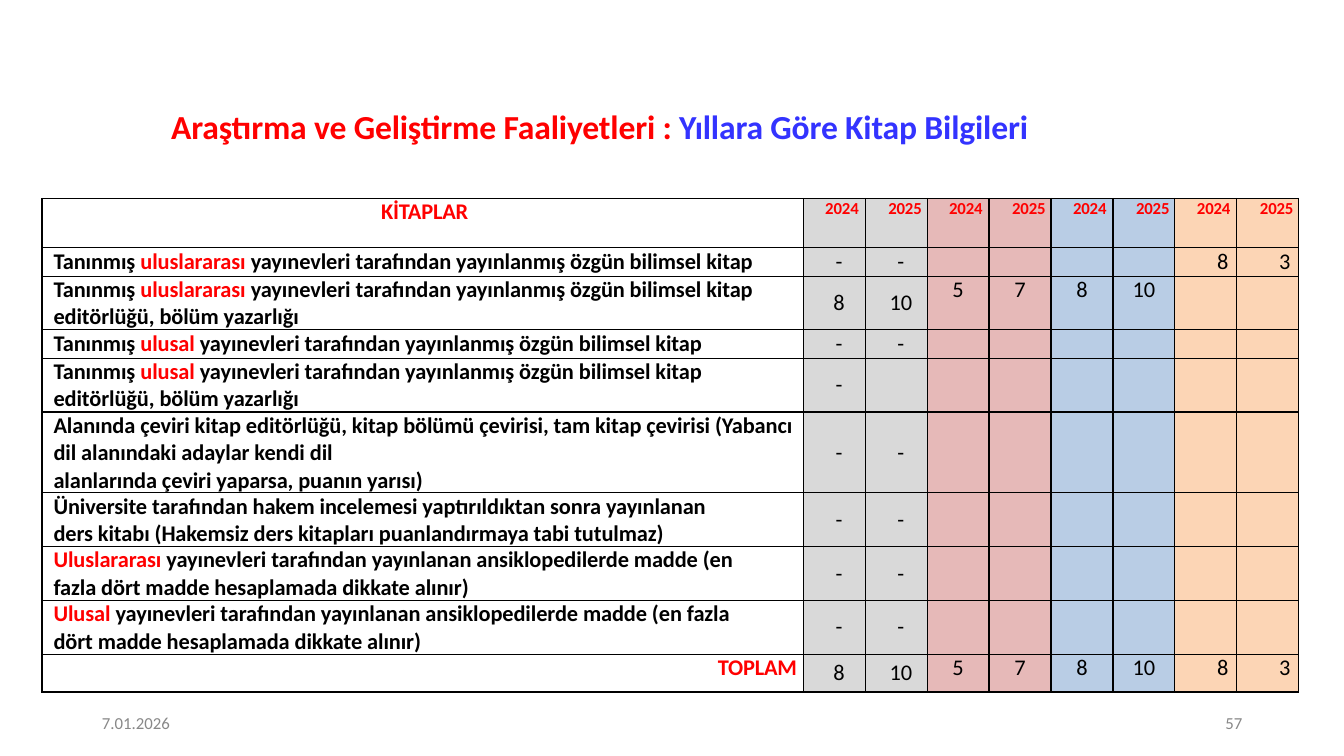
from lxml.etree import SubElement
from pptx import Presentation
from pptx.dml.color import RGBColor
from pptx.enum.text import MSO_ANCHOR, PP_ALIGN
from pptx.oxml.ns import qn
from pptx.util import Emu, Pt

RED = RGBColor(0xFF, 0x00, 0x00)
BLUE = RGBColor(0x33, 0x33, 0xFF)
BLACK = RGBColor(0x00, 0x00, 0x00)
GREY = RGBColor(0x88, 0x88, 0x88)
YEAR_FILLS = [RGBColor(0xD9, 0xD9, 0xD9), RGBColor(0xE6, 0xB9, 0xB8),
              RGBColor(0xB9, 0xCD, 0xE5), RGBColor(0xFC, 0xD5, 0xB5)]
FONT = "Calibri"

TITLE = [("Araştırma ve Geliştirme Faaliyetleri : ", RED),
         ("Yıllara Göre Kitap Bilgileri", BLUE)]
DATE, PAGE = "7.01.2026", "57"
HEADING, TOTAL = "KİTAPLAR", "TOPLAM"
YEARS = ["2024", "2025"] * 4
NONE = [""] * 6
WIDE, NARROW = 0, 51  # right margins of the label cells

# height, right margin, red words, label lines (each red word is cut out), values
ROWS = [
    (27, WIDE, "uluslararası",
     ["Tanınmış uluslararası yayınevleri tarafından yayınlanmış özgün bilimsel kitap"],
     ["-", "-", "", "", "", "", "8", "3"]),
    (51, WIDE, "uluslararası",
     ["Tanınmış uluslararası yayınevleri tarafından yayınlanmış özgün bilimsel kitap "
      "editörlüğü, bölüm yazarlığı"],
     ["8", "10", "5", "7", "8", "10", "", ""]),
    (27, WIDE, "ulusal",
     ["Tanınmış ulusal yayınevleri tarafından yayınlanmış özgün bilimsel kitap"],
     ["-", "-"] + NONE),
    (51, NARROW, "ulusal",
     ["Tanınmış ulusal yayınevleri tarafından yayınlanmış özgün bilimsel kitap "
      "editörlüğü, bölüm yazarlığı"],
     ["-", ""] + NONE),
    (77, WIDE, None,
     ["Alanında çeviri kitap editörlüğü, kitap bölümü çevirisi, tam kitap çevirisi "
      "(Yabancı dil alanındaki adaylar kendi dil",
      "alanlarında çeviri yaparsa, puanın yarısı)"],
     ["-", "-"] + NONE),
    (51, NARROW, None,
     ["Üniversite tarafından hakem incelemesi yaptırıldıktan sonra yayınlanan ders "
      "kitabı (Hakemsiz ders kitapları puanlandırmaya tabi tutulmaz)"],
     ["-", "-"] + NONE),
    (51, NARROW, "Uluslararası",
     ["Uluslararası yayınevleri tarafından yayınlanan ansiklopedilerde madde (en fazla "
      "dört madde hesaplamada dikkate alınır)"],
     ["-", "-"] + NONE),
    (51, NARROW, "Ulusal",
     ["Ulusal yayınevleri tarafından yayınlanan ansiklopedilerde madde (en fazla dört "
      "madde hesaplamada dikkate alınır)"],
     ["-", "-"] + NONE),
]
TOTALS = ["8", "10", "5", "7", "8", "10", "8", "3"]
HEAD_H, TOTAL_H = 47, 36
LABEL_W, YEAR_W = 725, 59
TABLE_X, TABLE_Y = 40, 189


def px(n):
    return Emu(n * 9525)


def add_run(p, text, size, color, bold=False, spacing=0):
    """Append a run; spacing is in hundredths of a point."""
    r = p.add_run()
    r.text = text
    r.font.name, r.font.size, r.font.bold = FONT, Pt(size), bold
    r.font.color.rgb = color
    if spacing:
        r.font._element.set("spc", str(spacing))


def add_text(s, x, y, w, h, parts, size, bold=False, left=0, top=0, spacing=0):
    tf = s.shapes.add_textbox(px(x), px(y), px(w), px(h)).text_frame
    tf.word_wrap = True
    tf.margin_left, tf.margin_top = px(left), px(top)
    tf.margin_right = tf.margin_bottom = 0
    for text, color in parts:
        add_run(tf.paragraphs[0], text, size, color, bold, spacing)


def style_cell(cell, fill=None, left=0, right=0, align=PP_ALIGN.LEFT, anchor=MSO_ANCHOR.TOP):
    cell.margin_left, cell.margin_right = px(left), px(right)
    cell.margin_top = cell.margin_bottom = 0
    cell.vertical_anchor = anchor
    tcPr = cell._tc.get_or_add_tcPr()
    for side in ("lnL", "lnR", "lnT", "lnB"):
        ln = SubElement(tcPr, qn("a:" + side), w=str(Pt(1)))
        color = SubElement(SubElement(ln, qn("a:solidFill")), qn("a:srgbClr"))
        color.set("val", str(BLACK))
    if fill is None:
        cell.fill.background()
    else:
        cell.fill.solid()
        cell.fill.fore_color.rgb = fill
    p = cell.text_frame.paragraphs[0]
    p.alignment = align
    return p


def fill_label(cell, right, red_word, lines):
    p = style_cell(cell, left=11, right=right)
    for i, line in enumerate(lines):
        if i:
            p = cell.text_frame.add_paragraph()
        before, word, after = line.partition(red_word) if red_word else (line, "", "")
        for text, color in ((before, BLACK), (word, RED), (after, BLACK)):
            if text:
                add_run(p, text, 16, color, True, -6)


def fill_values(table, row, values):
    for i, value in enumerate(values):
        group = i // 2
        layout = {}
        if group == 0:
            layout = dict(left=16, right=7, align=PP_ALIGN.CENTER, anchor=MSO_ANCHOR.MIDDLE)
        elif group == 3:
            layout = dict(right=8, align=PP_ALIGN.RIGHT)
        else:
            layout = dict(align=PP_ALIGN.CENTER)
        p = style_cell(table.cell(row, i + 1), YEAR_FILLS[group], **layout)
        if value:
            add_run(p, value, 16, BLACK)
        else:
            SubElement(p._p, qn("a:endParaRPr"), sz="1000")


def add_books_table(s):
    heights = [HEAD_H] + [row[0] for row in ROWS] + [TOTAL_H]
    widths = [LABEL_W] + [YEAR_W] * len(YEARS)
    table = s.shapes.add_table(len(heights), len(widths), px(TABLE_X), px(TABLE_Y),
                               px(sum(widths)), px(sum(heights))).table
    table.first_row = table.horz_banding = False
    for column, w in zip(table.columns, widths):
        column.width = px(w)
    for row, h in zip(table.rows, heights):
        row.height = px(h)

    p = style_cell(table.cell(0, 0), left=4, align=PP_ALIGN.CENTER)
    add_run(p, HEADING, 16, RED, True, -15)
    for i, year in enumerate(YEARS):
        p = style_cell(table.cell(0, i + 1), YEAR_FILLS[i // 2], left=21 + i % 2)
        add_run(p, year, 12, RED, True, -10)

    for n, (_, right, red_word, lines, values) in enumerate(ROWS, 1):
        fill_label(table.cell(n, 0), right, red_word, lines)
        fill_values(table, n, values)

    last = len(heights) - 1
    p = style_cell(table.cell(last, 0), right=6, align=PP_ALIGN.RIGHT)
    add_run(p, TOTAL, 16, RED, True, -10)
    fill_values(table, last, TOTALS)


def main():
    prs = Presentation()
    prs.slide_width, prs.slide_height = px(1280), px(720)
    s = prs.slides.add_slide(prs.slide_layouts[6])
    add_text(s, 148, 80, 985, 72, TITLE, 24, bold=True, left=15, top=21, spacing=-12)
    add_books_table(s)
    add_text(s, 96, 679, 68, 19, [(DATE, GREY)], 12, left=1)
    add_text(s, 1164, 679, 22, 19, [(PAGE, GREY)], 12, left=3)
    prs.save("out.pptx")


if __name__ == "__main__":
    main()
